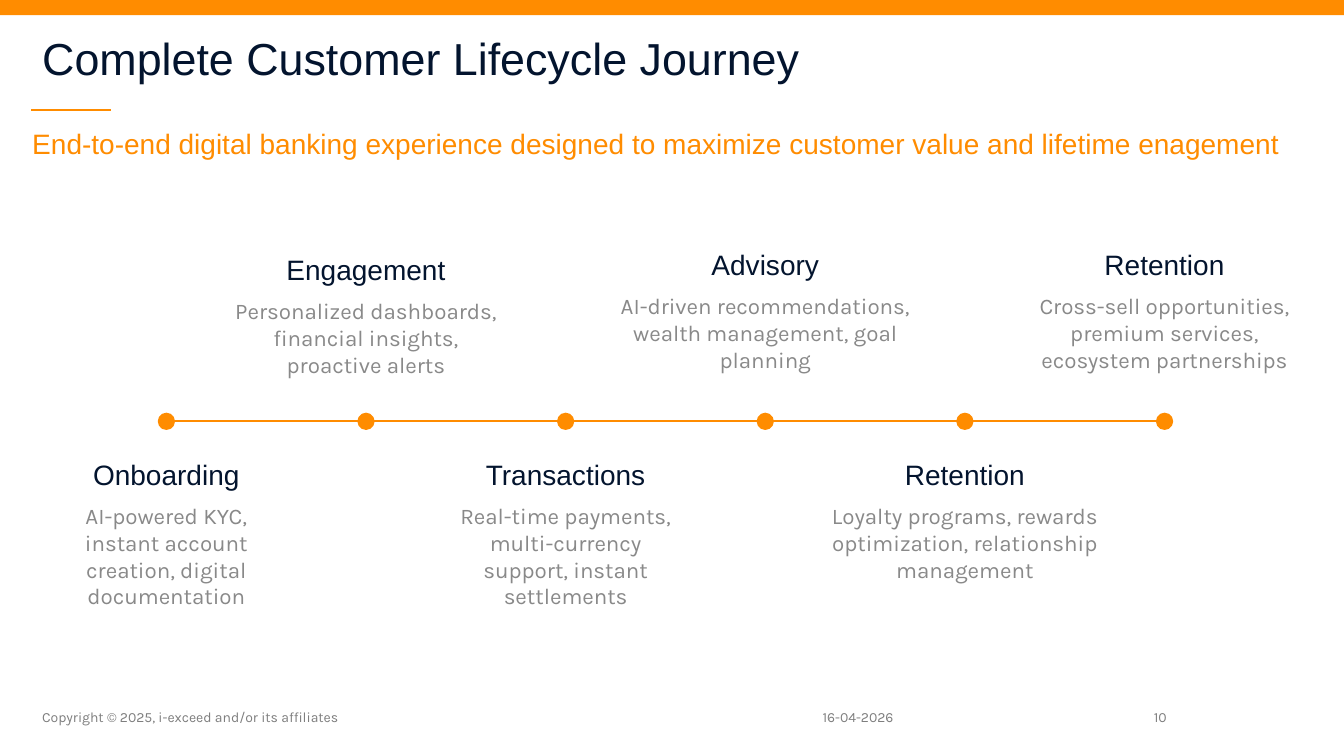
from lxml.etree import SubElement
from pptx import Presentation
from pptx.dml.color import RGBColor
from pptx.enum.shapes import MSO_CONNECTOR, MSO_SHAPE
from pptx.enum.text import MSO_ANCHOR, PP_ALIGN
from pptx.oxml.ns import qn
from pptx.util import Inches, Pt

ORANGE, NAVY, GREY, PALE = "FF8C00", "03142E", "7E7E7E", "898989"


def color(code):
    return RGBColor.from_string(code)


class Deck:
    """Holds the slide and its style, and draws each kind of element."""

    def __init__(self, slide):
        self.shapes = slide.shapes
        self.accent = color(ORANGE)
        self.weight = Pt(1.5)

    def shape(self, kind, left, top, width, height, edge=True):
        item = self.shapes.add_shape(
            kind, Inches(left), Inches(top), Inches(width), Inches(height))
        item.shadow.inherit = False
        item.fill.solid()
        item.fill.fore_color.rgb = self.accent
        if edge:
            item.line.color.rgb = self.accent
            item.line.width = self.weight
        else:
            item.line.fill.background()

    def line(self, start, end, top):
        item = self.shapes.add_connector(
            MSO_CONNECTOR.STRAIGHT, Inches(start), Inches(top), Inches(end), Inches(top))
        item.line.color.rgb = self.accent
        item.line.width = self.weight
        SubElement(item._element.spPr, qn("a:effectLst"))

    def text(self, words, left, top, width, height, size, font, code,
             align=PP_ALIGN.LEFT, anchor=MSO_ANCHOR.TOP, space=1.0, inset=0.1, wrap=True):
        box = self.shapes.add_textbox(
            Inches(left), Inches(top), Inches(width), Inches(height))
        frame = box.text_frame
        frame.text = words
        frame.word_wrap = wrap
        frame.vertical_anchor = anchor
        frame.margin_left = Inches(inset)
        para = frame.paragraphs[0]
        para.alignment = align
        para.line_spacing = space
        for run in para.runs:
            run.font.size = Pt(size)
            run.font.name = font
            run.font.color.rgb = color(code)

    def stage(self, mid, top, head, body, width):
        self.text(head, mid - 0.9, top, 1.8, 0.44, 20, "Arial", NAVY,
                  PP_ALIGN.CENTER, wrap=False)
        self.text(body, mid - width / 2, top + 0.44, width, 0.91, 16, "Karla", PALE,
                  PP_ALIGN.CENTER)

    def foot(self, words, left, width, align=PP_ALIGN.LEFT):
        self.text(words, left, 6.85, width, 0.4, 10, "Karla", GREY, align, MSO_ANCHOR.BOTTOM)


STAGES = [
    ("Onboarding", "AI-powered KYC, instant account creation, digital documentation", 4.49, 2.58),
    ("Engagement", "Personalized dashboards, financial insights, proactive alerts", 2.46, 2.84),
    ("Transactions", "Real-time payments, multi-currency support, instant settlements", 4.49, 2.58),
    ("Advisory", "AI-driven recommendations, wealth management, goal planning", 2.41, 3.12),
    ("Retention", "Loyalty programs, rewards optimization, relationship management", 4.49, 2.84),
    ("Retention", "Cross-sell opportunities, premium services, ecosystem partnerships", 2.41, 2.84),
]


def main():
    show = Presentation()
    show.slide_width, show.slide_height = Inches(13.33), Inches(7.5)
    deck = Deck(show.slides.add_slide(show.slide_layouts[6]))

    deck.shape(MSO_SHAPE.RECTANGLE, 0, 0, 13.33, 0.15, edge=False)
    deck.line(0.31, 1.1, 1.09)
    deck.text("Complete Customer Lifecycle Journey", 0.32, 0.15, 12.7, 0.74,
              32, "Arial", NAVY, anchor=MSO_ANCHOR.BOTTOM, space=0.9)
    deck.text("End-to-end digital banking experience designed to maximize "
              "customer value and lifetime enagement", 0.32, 1.24, 12.7, 0.36,
              20, "Arial", ORANGE, space=0.9, inset=0)

    first, step, axis, dot = 1.65, 1.98, 4.18, 0.15
    deck.line(first, first + step * (len(STAGES) - 1), axis)
    for place, (head, body, top, width) in enumerate(STAGES):
        mid = first + step * place
        deck.shape(MSO_SHAPE.OVAL, mid - dot / 2, axis - dot / 2, dot, dot)
        deck.stage(mid, top, head, body, width)

    deck.foot("Copyright © 2025, i-exceed and/or its affiliates", 0.32, 6.84)
    deck.foot("16-04-2026", 8.06, 1.68)
    deck.foot("10", 10.65, 1.02, PP_ALIGN.RIGHT)
    show.save("out.pptx")


if __name__ == "__main__":
    main()
